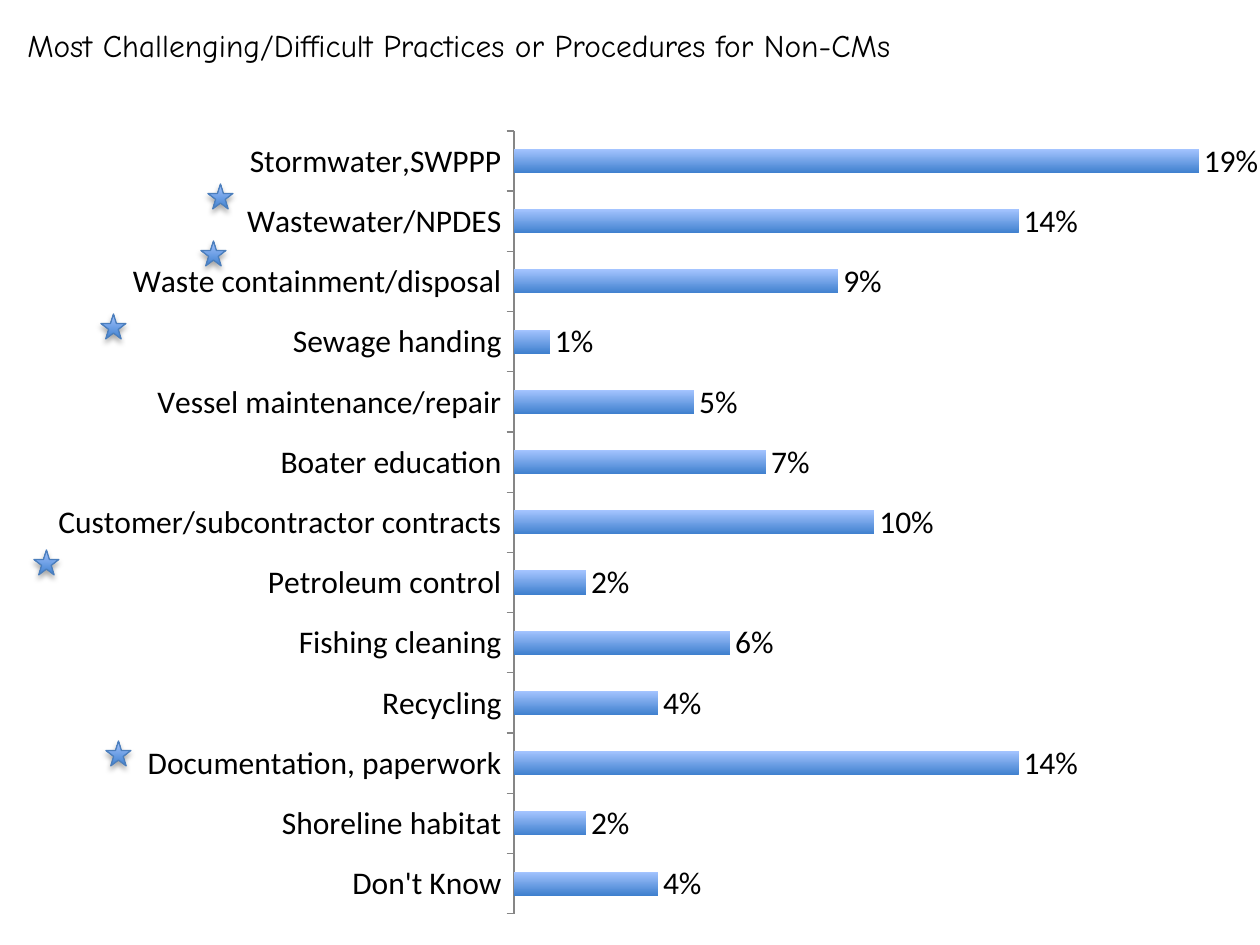
import pptx
import pptx.chart.data
import pptx.dml.color
import pptx.enum.chart
import pptx.enum.shapes
import pptx.oxml
import pptx.oxml.ns
import pptx.util

PX_PER_INCH = 126
BLANK_LAYOUT = 6

PRACTICES = [  # top bar first
    ("Stormwater,SWPPP", 0.19),
    ("Wastewater/NPDES", 0.14),
    ("Waste containment/disposal", 0.09),
    ("Sewage handing", 0.01),
    ("Vessel maintenance/repair", 0.05),
    ("Boater education", 0.07),
    ("Customer/subcontractor contracts", 0.10),
    ("Petroleum control", 0.02),
    ("Fishing cleaning", 0.06),
    ("Recycling", 0.04),
    ("Documentation, paperwork", 0.14),
    ("Shoreline habitat", 0.02),
    ("Don't Know", 0.04),
]
STARS = [(106, 741), (208, 184), (201, 241), (34, 550), (101, 314)]
STAR_SIZE = 25
CHART_AREA = (34, 115, 1226, 815)
PLOT_AREA = (514, 131, 721, 783)


def px(length):
    return pptx.util.Emu(round(length * 914400 / PX_PER_INCH))


def color(hex_string):
    return pptx.dml.color.RGBColor.from_string(hex_string)


class Slide:
    ink = "000000"
    outline = "4B7EBC"
    axis_line = "868686"
    gradient = ("3F80CE", "A4C4FF")  # bottom to top
    title_font = "Comic Neue"
    chart_font = "Calibri"
    text_size = pptx.util.Pt(18)

    def __init__(self, deck):
        self.page = deck.slides.add_slide(deck.slide_layouts[BLANK_LAYOUT])

    def set_font(self, font, name):
        font.name = name
        font.size = self.text_size
        font.color.rgb = color(self.ink)

    def shade(self, fill):
        fill.gradient()
        fill.gradient_angle = 90
        for stop, hex_string in zip(fill.gradient_stops, self.gradient):
            stop.color.rgb = color(hex_string)

    def title(self, words, *area):
        box = self.page.shapes.add_textbox(*map(px, area))
        box.text_frame.word_wrap = True
        para = box.text_frame.paragraphs[0]
        para.text = words
        self.set_font(para.font, self.title_font)

    def star(self, left, top, size):
        star = self.page.shapes.add_shape(
            pptx.enum.shapes.MSO_SHAPE.STAR_5_POINT, *map(px, (left, top, size, size)))
        self.shade(star.fill)
        star.line.color.rgb = color(self.outline)
        star.line.width = pptx.util.Pt(0.75)
        # Soft shadow straight below
        star.shadow.inherit = False
        effects = star.element.spPr.find(pptx.oxml.ns.qn("a:effectLst"))
        effects.append(pptx.oxml.parse_xml(
            f'<a:outerShdw {pptx.oxml.ns.nsdecls("a")} blurRad="39370" dist="22860" '
            'dir="5400000" rotWithShape="0"><a:srgbClr val="000000">'
            '<a:alpha val="35000"/></a:srgbClr></a:outerShdw>'))

    def bar_chart(self, rows, area, plot_area):
        data = pptx.chart.data.CategoryChartData(number_format="0%")
        data.categories = [name for name, share in reversed(rows)]
        data.add_series("Series 1", [share for name, share in reversed(rows)])
        chart = self.page.shapes.add_chart(
            pptx.enum.chart.XL_CHART_TYPE.BAR_CLUSTERED, *map(px, area), data).chart
        chart.has_legend = False
        chart.has_title = False
        self.set_font(chart.font, self.chart_font)

        # Axes
        categories, values = chart.category_axis, chart.value_axis
        categories.major_tick_mark = pptx.enum.chart.XL_TICK_MARK.OUTSIDE
        categories.format.line.color.rgb = color(self.axis_line)
        values.has_major_gridlines = False
        values.visible = False
        values.minimum_scale, values.maximum_scale = 0, 0.2

        # Bars and their labels
        plot = chart.plots[0]
        plot.gap_width = 150
        plot.vary_by_categories = False
        self.shade(plot.series[0].format.fill)
        plot.has_data_labels = True
        labels = plot.data_labels
        labels.show_value = True
        labels.number_format = "0%"
        labels.number_format_is_linked = False
        labels.position = pptx.enum.chart.XL_LABEL_POSITION.OUTSIDE_END
        self.place_plot(chart, area, plot_area)

    def place_plot(self, chart, area, plot_area):
        left, top, width, height = area
        x, y, w, h = plot_area
        shares = {"x": (x - left) / width, "y": (y - top) / height,
                  "w": w / width, "h": h / height}
        entries = "".join(f'<c:{key} val="{share:.4f}"/>' for key, share in shares.items())
        layout = pptx.oxml.parse_xml(
            f'<c:layout {pptx.oxml.ns.nsdecls("c")}><c:manualLayout>'
            '<c:layoutTarget val="inner"/><c:xMode val="edge"/><c:yMode val="edge"/>'
            f'{entries}</c:manualLayout></c:layout>')
        plot_element = chart.element.chart.plotArea
        for old in plot_element.findall(pptx.oxml.ns.qn("c:layout")):
            plot_element.remove(old)
        plot_element.insert(0, layout)


def main():
    deck = pptx.Presentation()
    deck.slide_width, deck.slide_height = px(1260), px(945)
    slide = Slide(deck)
    slide.title("Most Challenging/Difficult Practices or Procedures for Non-CMs",
                15, 20, 1096, 50)
    slide.bar_chart(PRACTICES, CHART_AREA, PLOT_AREA)
    for left, top in STARS:
        slide.star(left, top, STAR_SIZE)
    deck.save("out.pptx")


if __name__ == "__main__":
    main()
